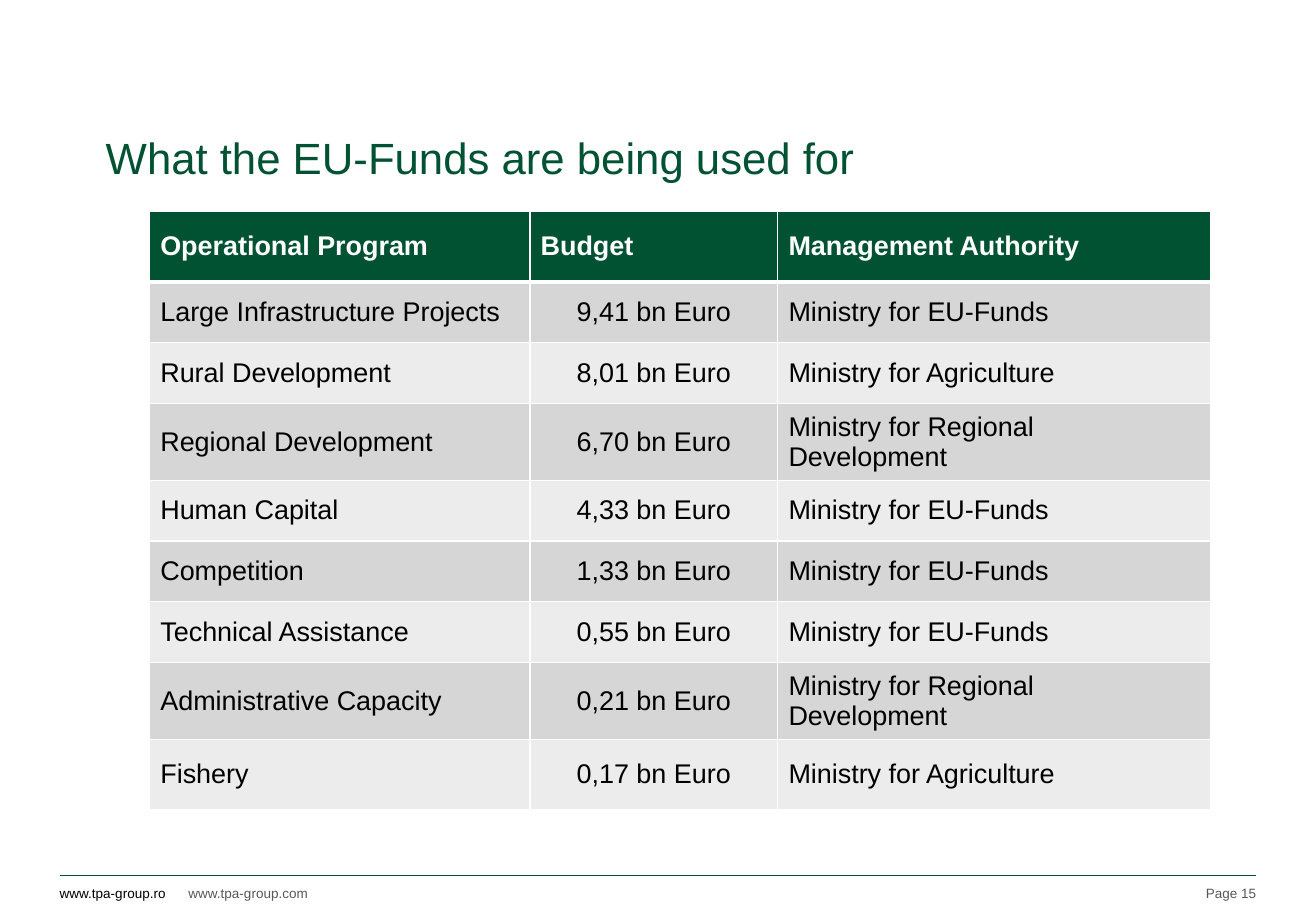
from lxml import etree
from pptx import Presentation
from pptx.dml.color import RGBColor
from pptx.enum.shapes import MSO_CONNECTOR
from pptx.enum.text import MSO_ANCHOR, PP_ALIGN
from pptx.oxml.ns import qn
from pptx.util import Inches, Pt

LEFT, CENTER, RIGHT = PP_ALIGN.LEFT, PP_ALIGN.CENTER, PP_ALIGN.RIGHT
MIDDLE, BOTTOM = MSO_ANCHOR.MIDDLE, MSO_ANCHOR.BOTTOM
STRAIGHT = MSO_CONNECTOR.STRAIGHT
TITLE_ONLY = 5
FONT = "Arial"
COLORS = {"green": "005233", "black": "000000", "gray": "58585A",
          "white": "FFFFFF", "band_dark": "D6D6D7", "band_light": "ECECEC"}

HEADERS = ("Operational Program", "Budget", "Management Authority")
EU_FUNDS = "Ministry for EU-Funds"
AGRICULTURE = "Ministry for Agriculture"
REGIONAL = "Ministry for Regional Development"
PROGRAMS = [
    ("Large Infrastructure Projects", "9,41 bn Euro", EU_FUNDS),
    ("Rural Development", "8,01 bn Euro", AGRICULTURE),
    ("Regional Development", "6,70 bn Euro", REGIONAL),
    ("Human Capital", "4,33 bn Euro", EU_FUNDS),
    ("Competition", "1,33 bn Euro", EU_FUNDS),
    ("Technical Assistance", "0,55 bn Euro", EU_FUNDS),
    ("Administrative Capacity", "0,21 bn Euro", REGIONAL),
    ("Fishery", "0,17 bn Euro", AGRICULTURE),
]
COL_WIDTHS = (3.13, 2.04, 3.56)
ROW_HEIGHT, TALL_ROW = 0.5, 0.58
TALL_ROWS = (0, 3, 7, 8)


def rgb(name):
    return RGBColor.from_string(COLORS[name])


def write(tf, text, size, color, align=LEFT, bold=False):
    p = tf.paragraphs[0]
    p.alignment = align
    r = p.add_run()
    r.text = text
    for key, value in {"name": FONT, "size": Pt(size), "bold": bold}.items():
        setattr(r.font, key, value)
    r.font.color.rgb = rgb(color)


def frame(tf, anchor, wrap=True):
    values = dict.fromkeys(("margin_left", "margin_top", "margin_right", "margin_bottom"), 0)
    values.update(vertical_anchor=anchor, word_wrap=wrap)
    for key, value in values.items():
        setattr(tf, key, value)


def set_borders(cell, bottom):
    tc_pr = cell._tc.get_or_add_tcPr()
    for side, width in (("lnL", 1), ("lnR", 1), ("lnT", 1), ("lnB", bottom)):
        ln = etree.SubElement(tc_pr, qn("a:" + side), w=str(Pt(width)))
        fill = etree.SubElement(ln, qn("a:solidFill"))
        etree.SubElement(fill, qn("a:srgbClr"), val=COLORS["white"])


def add_title(slide, box):
    sp = slide.shapes.title
    sp.left, sp.top, sp.width, sp.height = map(Inches, box)
    frame(sp.text_frame, MIDDLE)
    write(sp.text_frame, "What the EU-Funds are being used for", 25.9, "green")


def add_programs(slide, left, top):
    rows = [HEADERS] + PROGRAMS
    heights = [TALL_ROW if i in TALL_ROWS else ROW_HEIGHT for i in range(len(rows))]
    size = (sum(COL_WIDTHS), sum(heights))
    table = slide.shapes.add_table(len(rows), len(HEADERS),
                                   *map(Inches, (left, top, *size))).table
    table.horz_banding = False
    for col, width in zip(table.columns, COL_WIDTHS):
        col.width = Inches(width)
    for i, (values, height) in enumerate(zip(rows, heights)):
        table.rows[i].height = Inches(height)
        header = i == 0
        band = "green" if header else "band_dark" if i % 2 else "band_light"
        for j, text in enumerate(values):
            cell = table.cell(i, j)
            cell.vertical_anchor = MIDDLE
            cell.margin_left = cell.margin_right = Inches(0.09)
            set_borders(cell, 3 if header else 1)
            cell.fill.solid()
            cell.fill.fore_color.rgb = rgb(band)
            write(cell.text_frame, text, 16, "white" if header else "black",
                  CENTER if j == 1 and not header else LEFT, header)


def add_footer(slide, left, top, width):
    # Rule
    line = slide.shapes.add_connector(STRAIGHT, *map(Inches, (left, top, left + width, top)))
    line.line.color.rgb = rgb("green")
    line.line.width = Pt(0.5)
    etree.SubElement(line._element.spPr, qn("a:effectLst"))
    # Addresses and page number
    for text, x, w, color, align, anchor, wrap in (
            ("www.tpa-group.ro", 0, 0.89, "black", LEFT, MIDDLE, False),
            ("www.tpa-group.com", 1.06, 1.03, "gray", LEFT, MIDDLE, False),
            ("Page 15", width - 0.93, 0.93, "gray", RIGHT, BOTTOM, True)):
        sp = slide.shapes.add_textbox(*map(Inches, (left + x, top + 0.08, w, 0.13)))
        frame(sp.text_frame, anchor, wrap)
        write(sp.text_frame, text, 8, color, align)


def main():
    prs = Presentation()
    prs.slide_width, prs.slide_height = Inches(10.83), Inches(7.5)
    slide = prs.slides.add_slide(prs.slide_layouts[TITLE_ONLY])
    add_footer(slide, 0.49, 7.21, 9.85)
    add_title(slide, (0.87, 1.07, 7.31, 0.44))
    add_programs(slide, 1.23, 1.74)
    prs.save("out.pptx")


if __name__ == "__main__":
    main()
